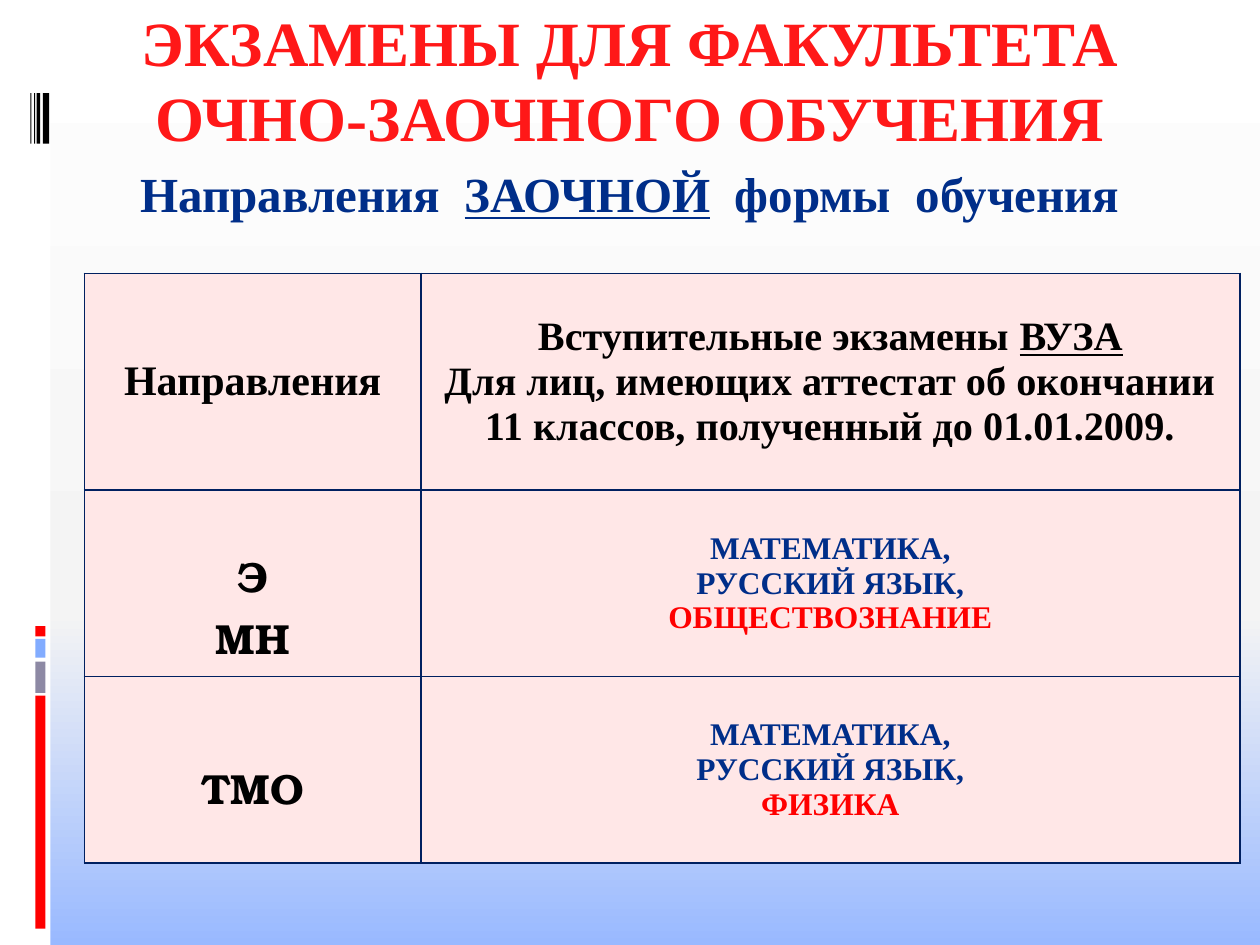
"""Build the slide of entrance exams for the part-time study faculty."""
import pptx
import pptx.dml.color
import pptx.enum.shapes
import pptx.enum.text
import pptx.oxml
import pptx.oxml.ns
import pptx.util
from pptx.util import Inches

RGBColor = pptx.dml.color.RGBColor
WHITE = RGBColor(0xFF, 0xFF, 0xFF)
BLACK = RGBColor(0x00, 0x00, 0x00)
RED = RGBColor(0xFF, 0x00, 0x00)
TITLE_RED = RGBColor(0xFF, 0x18, 0x18)
GREY = RGBColor(0x8D, 0x89, 0xA4)
LIGHT_BLUE = RGBColor(0x82, 0xAC, 0xFF)
NAVY = RGBColor(0x00, 0x2E, 0x89)
PINK = RGBColor(0xFF, 0xE7, 0xE7)
BORDER = RGBColor(0x00, 0x20, 0x60)
SERIF = "Times New Roman"
BONUM = "TeX Gyre Bonum"
NAMESPACE = pptx.oxml.ns.nsdecls("a")
MIDDLE = pptx.enum.text.MSO_ANCHOR.MIDDLE


def write_line(para, parts, size, font=SERIF):
    """Fill a centred paragraph with (text, colour, underline) parts."""
    para.alignment = pptx.enum.text.PP_ALIGN.CENTER
    for text, color, underline in parts:
        span = para.add_run()
        span.text = text
        span.font.name = font
        span.font.size = pptx.util.Pt(size)
        span.font.bold = True
        span.font.underline = underline
        span.font.color.rgb = color


def write_cell(cell, lines, size, font=SERIF):
    """Fill a bordered table cell with one paragraph for each line."""
    cell.fill.solid()
    cell.fill.fore_color.rgb = PINK
    frame = cell.text_frame
    for index, parts in enumerate(lines):
        para = frame.add_paragraph() if index else frame.paragraphs[0]
        write_line(para, parts, size, font)
    properties = cell._tc.get_or_add_tcPr()
    for index, side in enumerate(("lnL", "lnR", "lnT", "lnB")):
        properties.insert(index, pptx.oxml.parse_xml(
            f'<a:{side} {NAMESPACE} w="12700"><a:solidFill>'
            f'<a:srgbClr val="{BORDER}"/></a:solidFill></a:{side}>'))


deck = pptx.Presentation()
deck.slide_width, deck.slide_height = Inches(10), Inches(7.5)
page = deck.slides.add_slide(deck.slide_layouts[5])

page.background.fill.gradient()
gradient = page.background._cSld.find(".//" + pptx.oxml.ns.qn("a:gradFill"))
stops = "".join(
    f'<a:gs pos="{position * 1000}"><a:srgbClr val="{color}"/></a:gs>'
    for position, color in ((0, "FFFFFF"), (65, "F4F4F4"), (100, "99B9FF")))
gradient.getparent().replace(gradient, pptx.oxml.parse_xml(
    f'<a:gradFill {NAMESPACE} rotWithShape="1"><a:gsLst>{stops}</a:gsLst>'
    '<a:lin ang="5400000" scaled="0"/></a:gradFill>'))

bars = [
    (0, 0, 0.4, 7.5, WHITE),
    (0.28, 5.52, 0.08, 1.85, RED),
    (0.28, 5.25, 0.08, 0.25, GREY),
    (0.28, 5.07, 0.08, 0.15, LIGHT_BLUE),
    (0.28, 4.97, 0.08, 0.08, RED),
]
bars += [(left, 0.74, width, 0.4, BLACK)
         for left, width in ((0.34, 0.05), (0.29, 0.03), (0.27, 0.01), (0.24, 0.01))]
for left, top, width, height, color in bars:
    bar = page.shapes.add_shape(
        pptx.enum.shapes.MSO_SHAPE.RECTANGLE,
        Inches(left), Inches(top), Inches(width), Inches(height))
    bar.shadow.inherit = False
    bar.fill.solid()
    bar.fill.fore_color.rgb = color
    bar.line.fill.background()

title = page.shapes.title
title.left, title.top, title.width, title.height = 0, 0, Inches(10), Inches(1.25)
title.text_frame.text = "ЭКЗАМЕНЫ ДЛЯ ФАКУЛЬТЕТА\vОЧНО-ЗАОЧНОГО ОБУЧЕНИЯ"
title.text_frame.vertical_anchor = MIDDLE
title_para = title.text_frame.paragraphs[0]
title_para.alignment = pptx.enum.text.PP_ALIGN.CENTER
for span in title_para.runs:
    span.font.name = SERIF
    span.font.size = pptx.util.Pt(36)
    span.font.bold = True
    span.font.color.rgb = TITLE_RED

subtitle = page.shapes.add_textbox(0, Inches(1.25), Inches(10), Inches(0.57))
subtitle.text_frame.word_wrap = True
write_line(subtitle.text_frame.paragraphs[0], [
    ("Направления  ", NAVY, False),
    ("ЗАОЧНОЙ", NAVY, True),
    ("  формы  обучения", NAVY, False)], 28)

table = page.shapes.add_table(
    3, 2, Inches(0.67), Inches(2.17), Inches(9.17), Inches(4.68)).table
for column, width in zip(table.columns, (2.67, 6.5)):
    column.width = Inches(width)
for row, height in zip(table.rows, (1.72, 1.48, 1.48)):
    row.height = Inches(height)

write_cell(table.cell(0, 0), [[("Направления", BLACK, False)]], 24)
write_cell(table.cell(0, 1), [
    [("Вступительные экзамены ", BLACK, False), ("ВУЗА", BLACK, True)],
    [("Для лиц, имеющих аттестат об окончании 11 классов, "
      "полученный до 01.01.2009.", BLACK, False)]], 23)
for cell in table.rows[0].cells:
    cell.vertical_anchor = MIDDLE

directions = [
    (["Э", "МН"], 0.43, "ОБЩЕСТВОЗНАНИЕ"),
    (["ТМО"], 0.63, "ФИЗИКА"),
]
for row, (names, top_margin, third_exam) in enumerate(directions, start=1):
    name_cell, exam_cell = table.rows[row].cells
    write_cell(name_cell, [[(name, BLACK, False)] for name in names], 24, BONUM)
    name_cell.margin_top = Inches(top_margin)
    write_cell(exam_cell, [
        [("МАТЕМАТИКА,", NAVY, False)],
        [("РУССКИЙ ЯЗЫК,", NAVY, False)],
        [(third_exam, RED, False)]], 18)
    exam_cell.vertical_anchor = MIDDLE

deck.save("out.pptx")
